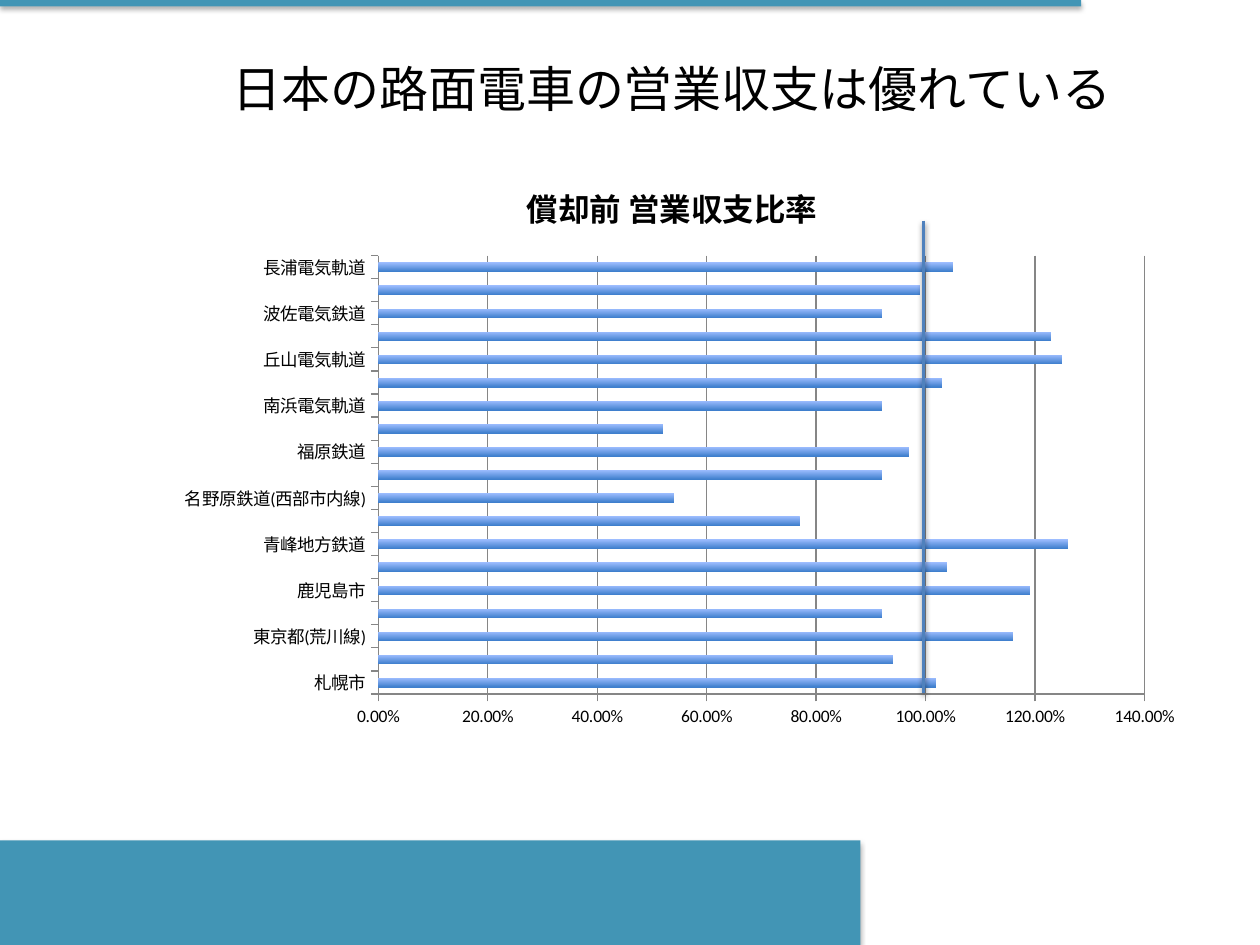
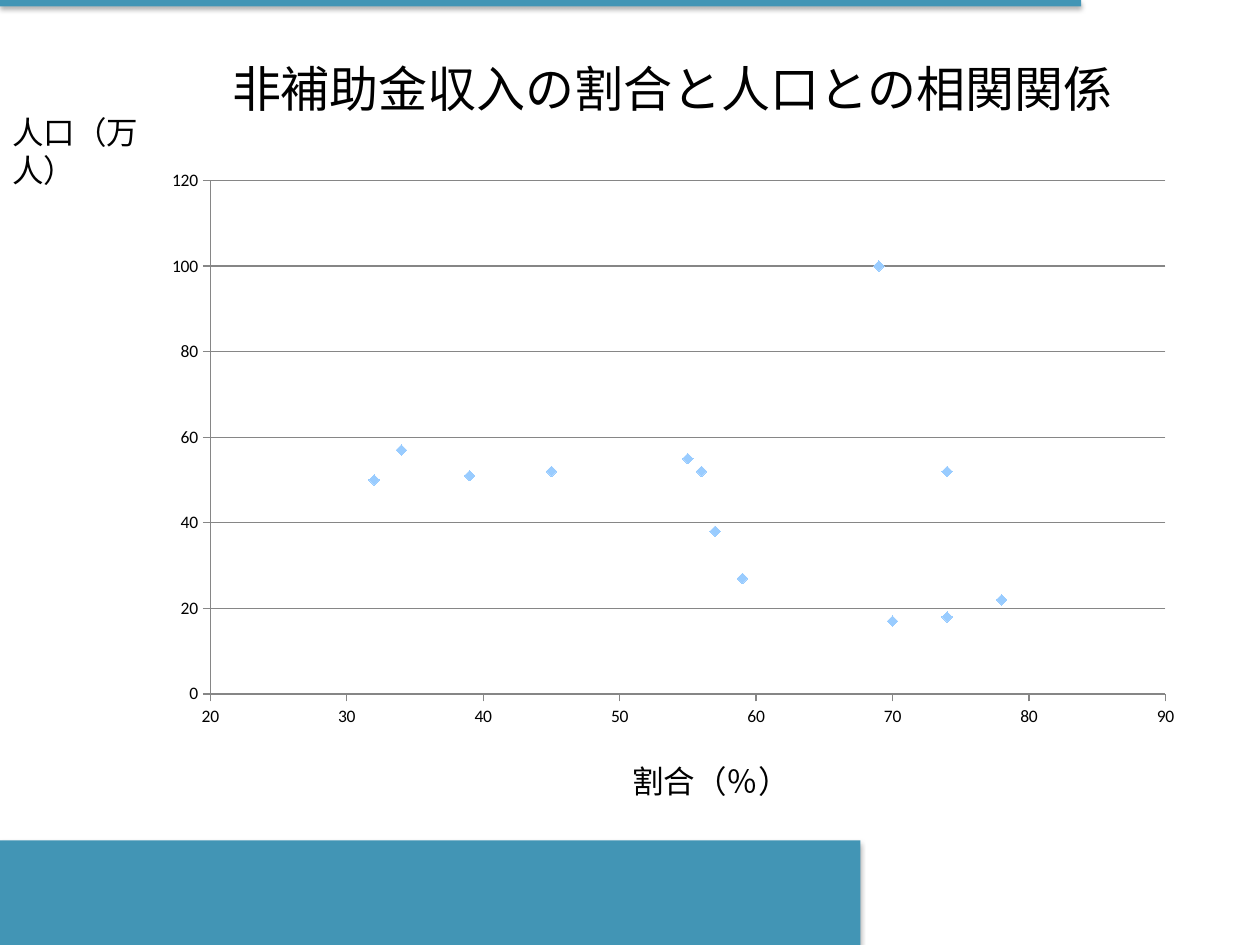
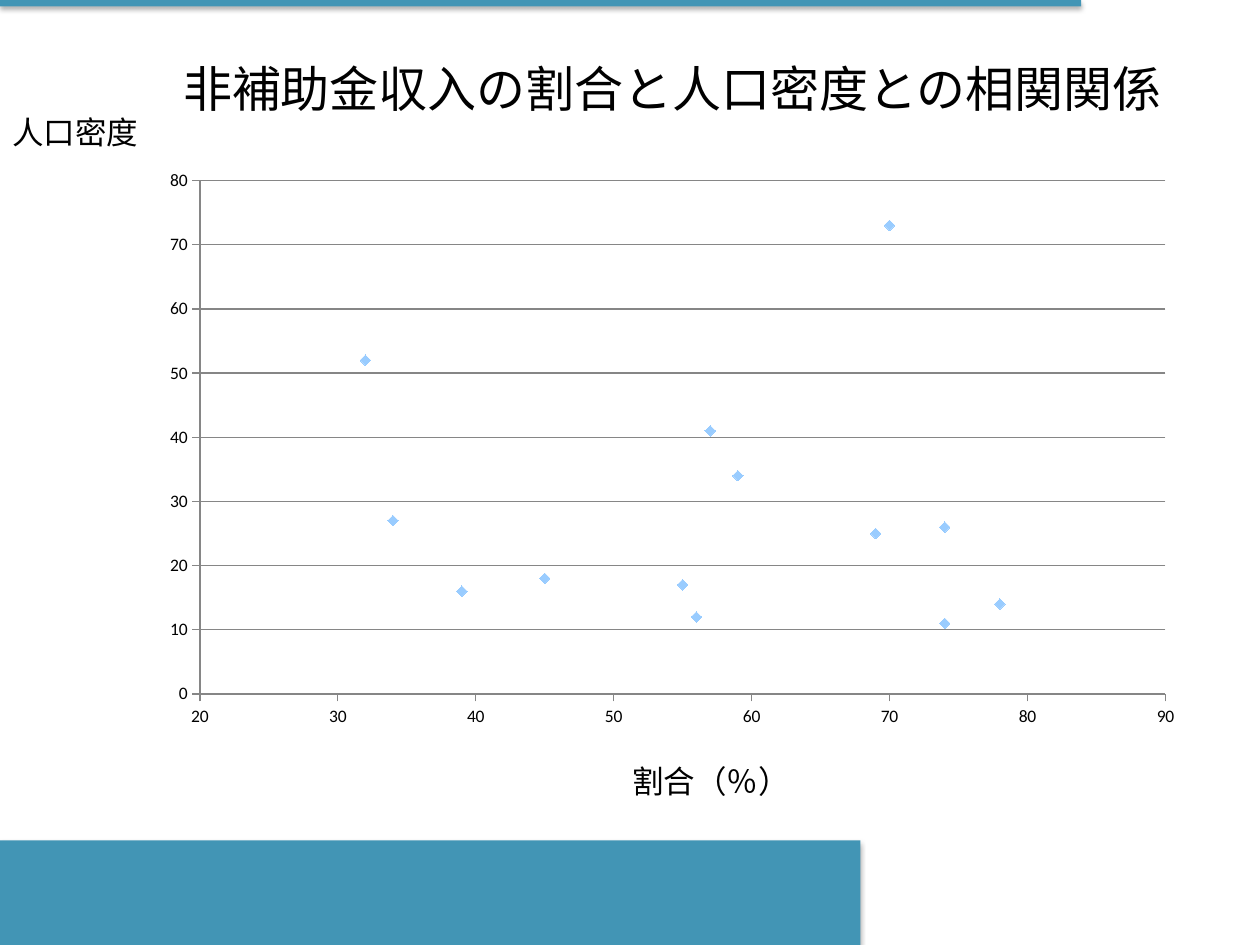
import pptx
import pptx.chart.data
import pptx.dml.color
import pptx.enum.chart
import pptx.enum.shapes
import pptx.enum.text
import pptx.oxml
import pptx.oxml.ns
import pptx.util
from lxml import etree

Inches = pptx.util.Inches
Pt = pptx.util.Pt
qn = pptx.oxml.ns.qn

TEAL, BLUE, BLACK, GRAY = "4295B5", "4F81BD", "000000", "868686"
BAR_TOP, BAR_BOTTOM, POINT = "9DBDFF", "3F7FCD", "99CCFF"
BANDS = [(0, 6.67, 6.83, 0.83), (0, 0, 8.58, 0.05)]
TITLE_BOX = (1.17, 0.43, 8.33, 0.53)
CHART_BOX = (1.17, 1.25, 8.33, 4.58)
VERTICAL_LABEL_BOX = (0, 0.85, 1.67, 0.4)
HORIZONTAL_LABEL_BOX = (4.92, 6, 1.67, 0.4)

BALANCE_RATIOS = [
    ("札幌市", 1.02), ("函館市", 0.94), ("東京都(荒川線)", 1.16),
    ("熊本市", 0.92), ("鹿児島市", 1.19), ("東都急行電鉄(若葉線)", 1.04),
    ("青峰地方鉄道", 1.26), ("北浦能鉄道(青波線)", 0.77),
    ("名野原鉄道(西部市内線)", 0.54), ("豊沢鉄道", 0.92), ("福原鉄道", 0.97),
    ("東浜電気鉄道(湖岸線)", 0.52), ("南浜電気軌道", 0.92),
    ("京野電気鉄道", 1.03), ("丘山電気軌道", 1.25), ("広浜電鉄", 1.23),
    ("波佐電気鉄道", 0.92), ("伊野鉄道", 0.99), ("長浦電気軌道", 1.05),
]
SHARES = [78, 57, 70, 69, 59, 74, 32, 56, 39, 34, 55, 74, 45]
POPULATIONS = [22, 38, 17, 100, 27, 52, 50, 52, 51, 57, 55, 18, 52]
DENSITIES = [14, 41, 73, 25, 34, 26, 52, 12, 16, 27, 17, 11, 18]


def rgb(color):
    """Turn a hex string into a colour."""
    return pptx.dml.color.RGBColor.from_string(color)


def inches(box):
    """Turn the numbers of a box into lengths."""
    return [Inches(length) for length in box]


def style_font(font, name, size, color=BLACK, bold=False):
    """Set the typeface, size and colour of a font."""
    font.name, font.size, font.bold = name, Pt(size), bold
    font.color.rgb = rgb(color)


def add_shadow(shape, opacity, distance):
    """Give a shape or connector a soft shadow straight below it."""
    properties = shape.element.spPr
    for effects in properties.findall(qn("a:effectLst")):
        properties.remove(effects)
    effects = etree.SubElement(properties, qn("a:effectLst"))
    shadow = etree.SubElement(
        effects, qn("a:outerShdw"), blurRad=str(Pt(3.1)), dist=str(Pt(distance)),
        dir="5400000", algn="t", rotWithShape="0")
    tone = etree.SubElement(shadow, qn("a:srgbClr"), val=BLACK)
    etree.SubElement(tone, qn("a:alpha"), val=str(opacity * 1000))


def move_bands_to_master(slide, master):
    """Draw the teal bands and place them behind everything on the master."""
    tree = master.shapes.element
    for box in BANDS:
        band = slide.shapes.add_shape(
            pptx.enum.shapes.MSO_SHAPE.RECTANGLE, *inches(box))
        band.fill.solid()
        band.fill.fore_color.rgb = rgb(TEAL)
        band.line.fill.background()
        add_shadow(band, 35, 1.8)
        band.element.nvSpPr.cNvPr.set("id", str(20 + len(master.shapes)))
        tree.insert(2, band.element)


def add_titled_slide(deck, layout, heading):
    """Add a slide with its centred heading."""
    slide = deck.slides.add_slide(layout)
    title = slide.shapes.title
    title.left, title.top, title.width, title.height = inches(TITLE_BOX)
    frame = title.text_frame
    frame.auto_size = pptx.enum.text.MSO_AUTO_SIZE.NONE
    frame.vertical_anchor = pptx.enum.text.MSO_ANCHOR.MIDDLE
    paragraph = frame.paragraphs[0]
    paragraph.alignment = pptx.enum.text.PP_ALIGN.CENTER
    run = paragraph.add_run()
    run.text = heading
    style_font(run.font, "Calibri", 28)
    return slide


def add_axis_label(slide, box, wording):
    """Add the text that names a chart axis."""
    frame = slide.shapes.add_textbox(*inches(box)).text_frame
    frame.word_wrap = True
    frame.auto_size = pptx.enum.text.MSO_AUTO_SIZE.SHAPE_TO_FIT_TEXT
    run = frame.paragraphs[0].add_run()
    run.text = wording
    style_font(run.font, "Arial", 18)


def add_styled_chart(slide, kind, data, box, plot):
    """Add a chart whose inner plot fills the given fractions of its box."""
    chart = slide.shapes.add_chart(kind, *inches(box), data).chart
    style_font(chart.font, "Calibri", 10)
    chart.has_legend = False
    chart.plots[0].vary_by_categories = False
    area = chart.element.chart.plotArea
    for layout in area.findall(qn("c:layout")):
        area.remove(layout)
    layout = etree.Element(qn("c:layout"))
    manual = etree.SubElement(layout, qn("c:manualLayout"))
    settings = [("layoutTarget", "inner"), ("xMode", "edge"), ("yMode", "edge")]
    for name, value in settings + list(zip("xywh", plot)):
        etree.SubElement(manual, qn(f"c:{name}"), val=str(value))
    area.insert(0, layout)
    for axis in (chart.category_axis, chart.value_axis):
        axis.major_tick_mark = pptx.enum.chart.XL_TICK_MARK.OUTSIDE
        axis.minor_tick_mark = pptx.enum.chart.XL_TICK_MARK.NONE
        axis.format.line.color.rgb = rgb(GRAY)
        axis.format.line.width = Pt(0.75)
    chart.category_axis.has_major_gridlines = False
    chart.value_axis.has_major_gridlines = True
    gridlines = chart.value_axis.major_gridlines.format.line
    gridlines.color.rgb = rgb(GRAY)
    gridlines.width = Pt(0.75)
    return chart


def set_scale(axis, low, high, step):
    """Fix the range and the step of an axis."""
    axis.minimum_scale, axis.maximum_scale, axis.major_unit = low, high, step


def add_ratio_chart(slide, box):
    """Add the bars of operating ratios and the break-even line."""
    data = pptx.chart.data.CategoryChartData(number_format="0.00%")
    data.categories = [operator for operator, _ in BALANCE_RATIOS]
    data.add_series("Series 1", [ratio for _, ratio in BALANCE_RATIOS])
    chart = add_styled_chart(
        slide, pptx.enum.chart.XL_CHART_TYPE.BAR_CLUSTERED, data, box,
        (0.22, 0.17, 0.73, 0.76))
    chart.has_title = True
    chart.chart_title.include_in_layout = False
    run = chart.chart_title.text_frame.paragraphs[0].add_run()
    run.text = "償却前 営業収支比率"
    style_font(run.font, "Calibri", 18, bold=True)
    set_scale(chart.value_axis, 0, 1.4, 0.2)
    labels = chart.value_axis.tick_labels
    labels.number_format, labels.number_format_is_linked = "0.00%", False
    chart.plots[0].gap_width = 150
    bars = chart.plots[0].series[0].format
    bars.fill.gradient()
    bars.fill.gradient_angle = 270
    for stop, color in zip(bars.fill.gradient_stops, (BAR_TOP, BAR_BOTTOM)):
        stop.color.rgb = rgb(color)
    bars.line.fill.background()
    left, top = box[:2]
    break_even = slide.shapes.add_connector(
        pptx.enum.shapes.MSO_CONNECTOR.STRAIGHT,
        *inches((left + 6.16, top + 0.5, left + 6.16, top + 4.25)))
    break_even.line.color.rgb = rgb(BLUE)
    break_even.line.width = Pt(2)
    add_shadow(break_even, 38, 1.6)


def add_share_scatter(slide, box, values, high, step, plot):
    """Add a scatter of values against the share of unsubsidised income."""
    data = pptx.chart.data.XyChartData()
    points = data.add_series("Series 1")
    for share, value in zip(SHARES, values):
        points.add_data_point(share, value)
    chart = add_styled_chart(
        slide, pptx.enum.chart.XL_CHART_TYPE.XY_SCATTER, data, box, plot)
    chart.has_title = False
    set_scale(chart.category_axis, 20, 90, 10)
    set_scale(chart.value_axis, 0, high, step)
    for axis in (chart.category_axis, chart.value_axis):
        axis.tick_labels.number_format = "General"
        axis.tick_labels.number_format_is_linked = False
    series = chart.plots[0].series[0]
    series.smooth = False
    series.format.line.fill.background()
    series.marker.style = pptx.enum.chart.XL_MARKER_STYLE.DIAMOND
    series.marker.size = 6
    series.marker.format.fill.solid()
    series.marker.format.fill.fore_color.rgb = rgb(POINT)
    series.marker.format.line.fill.background()


def add_scatter_slide(deck, layout, heading, measure, values, high, step, plot):
    """Add a slide that relates a measure to the income share."""
    slide = add_titled_slide(deck, layout, heading)
    add_share_scatter(slide, CHART_BOX, values, high, step, plot)
    add_axis_label(slide, VERTICAL_LABEL_BOX, measure)
    add_axis_label(slide, HORIZONTAL_LABEL_BOX, "割合（％）")


def main():
    """Build and save the three slides."""
    deck = pptx.Presentation()
    deck.slide_width, deck.slide_height = Inches(10), Inches(7.5)
    layout = deck.slide_layouts.get_by_name("Title Only")
    ratios = add_titled_slide(deck, layout, "日本の路面電車の営業収支は優れている")
    move_bands_to_master(ratios, deck.slide_master)
    add_ratio_chart(ratios, CHART_BOX)
    add_scatter_slide(
        deck, layout, "非補助金収入の割合と人口との相関関係", "人口（万人）",
        POPULATIONS, 120, 20, (0.06, 0.04, 0.91, 0.89))
    add_scatter_slide(
        deck, layout, "非補助金収入の割合と人口密度との相関関係", "人口密度",
        DENSITIES, 80, 10, (0.05, 0.04, 0.92, 0.89))
    deck.save("out.pptx")


if __name__ == "__main__":
    main()
